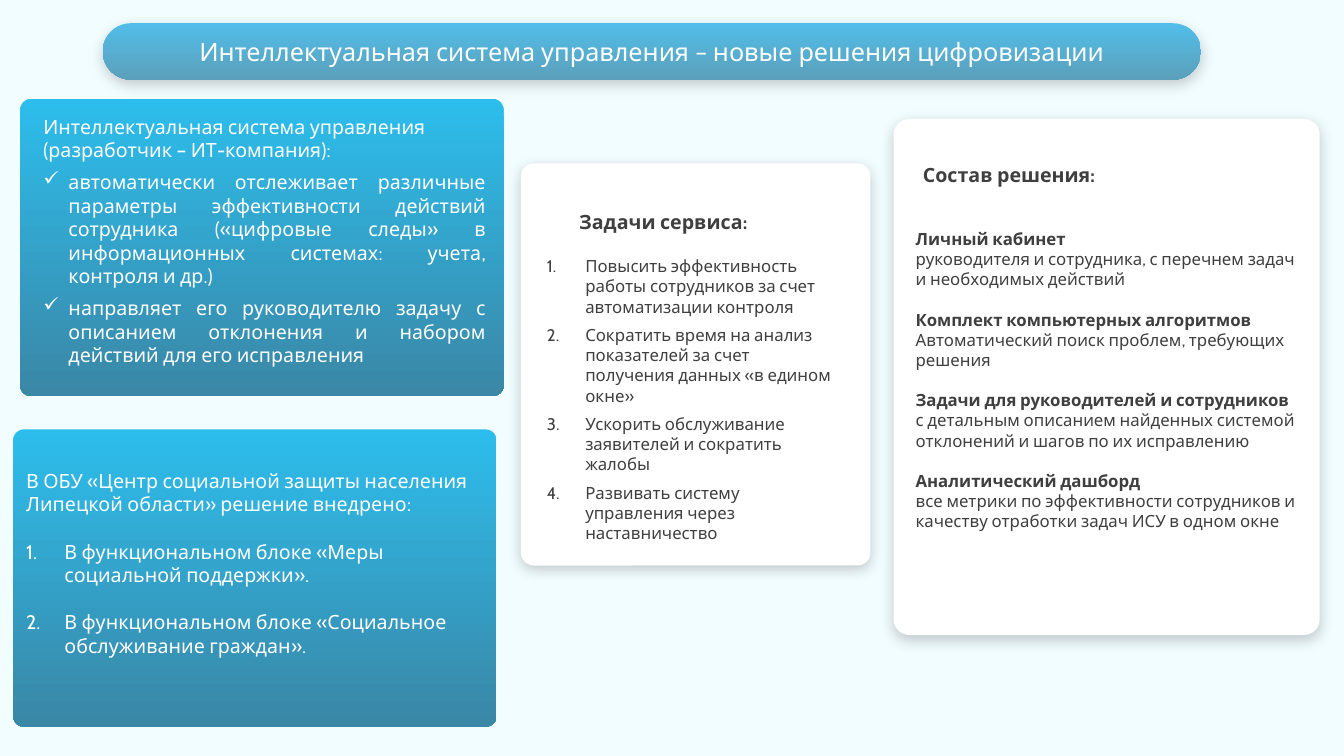
import dataclasses

import pptx
import pptx.dml.color
import pptx.enum.shapes
import pptx.enum.text
import pptx.oxml
import pptx.oxml.ns
import pptx.util

ALIGN = pptx.enum.text.PP_ALIGN
ANCHOR = pptx.enum.text.MSO_ANCHOR
WIDTH, HEIGHT = 13.34, 7.5


@dataclasses.dataclass(frozen=True)
class Theme:
    background: str = "F2FDFF"
    white: str = "FFFFFF"
    dark: str = "3F3F3F"
    banner: tuple = ("51BDE8", "5CA0BB")
    panel: tuple = ("2DBDEC", "3A87A6")
    title_font: str = "Karla"
    body_font: str = "Cabin"
    title: int = 18
    heading: int = 14
    body: int = 12
    corner: float = 0.037
    gap: int = 6
    heading_line: float = 16.8  # height of one heading line, points
    body_line: float = 14.4  # height of one body line, points


THEME = Theme()

INTRO = "Интеллектуальная система управления (разработчик – ИТ-компания):"
ABILITIES = (
    "автоматически отслеживает различные параметры эффективности действий сотрудника "
    "(«цифровые следы» в информационных системах: учета, контроля и др.)",
    "направляет его руководителю задачу с описанием отклонения и набором действий "
    "для его исправления",
)
ROLLOUT = "В ОБУ «Центр социальной защиты населения Липецкой области» решение внедрено:"
BLOCKS = (
    "В функциональном блоке «Меры социальной поддержки».",
    "В функциональном блоке «Социальное обслуживание граждан».",
)
TASKS = (
    "Повысить эффективность работы сотрудников за счет автоматизации контроля",
    "Сократить время на анализ показателей за счет получения данных «в едином окне»",
    "Ускорить обслуживание заявителей и сократить жалобы",
    "Развивать систему управления через наставничество",
)
PARTS = (
    ("Личный кабинет",
     "руководителя и сотрудника, с перечнем задач и необходимых действий"),
    ("Комплект компьютерных алгоритмов",
     "Автоматический поиск проблем, требующих решения"),
    ("Задачи для руководителей и сотрудников",
     "с детальным описанием найденных системой отклонений и шагов по их исправлению"),
    ("Аналитический дашборд",
     "все метрики по эффективности сотрудников и качеству отработки задач ИСУ в одном окне"),
)


def rgb(color):
    return pptx.dml.color.RGBColor.from_string(color)


def place(left, top, width, height):
    """Turn percentages of the slide into lengths."""
    shares = ((left, WIDTH), (top, HEIGHT), (width, WIDTH), (height, HEIGHT))
    return [pptx.util.Inches(share * side / 100) for share, side in shares]


def add_shadow(shape):
    shape.shadow.inherit = False
    effects = shape._element.spPr.find(pptx.oxml.ns.qn("a:effectLst"))
    effects.append(pptx.oxml.parse_xml(
        f'<a:outerShdw {pptx.oxml.ns.nsdecls("a")} blurRad="127000" dist="38100" '
        'dir="5400000" algn="t" rotWithShape="0"><a:srgbClr val="000000">'
        '<a:alpha val="20000"/></a:srgbClr></a:outerShdw>'))


def set_frame(box, left_inset=0.1, top_inset=0.05, anchor=ANCHOR.TOP):
    frame = box.text_frame
    frame.word_wrap = True
    frame.vertical_anchor = anchor
    frame.margin_left = pptx.util.Inches(left_inset)
    frame.margin_top = pptx.util.Inches(top_inset)


def add_panel(page, area, fill, corner=THEME.corner, shadow=False, **frame):
    """Rounded panel; a pair of colours as fill runs from top to bottom."""
    panel = page.shapes.add_shape(
        pptx.enum.shapes.MSO_SHAPE.ROUNDED_RECTANGLE, *place(*area))
    panel.adjustments[0] = corner
    panel.line.fill.background()
    panel.shadow.inherit = False
    if isinstance(fill, tuple):
        panel.fill.gradient()
        panel.fill.gradient_angle = 270
        for stop, color in zip(panel.fill.gradient_stops, fill):
            stop.color.rgb = rgb(color)
    else:
        panel.fill.solid()
        panel.fill.fore_color.rgb = rgb(fill)
    if shadow:
        add_shadow(panel)
    set_frame(panel, **frame)
    return panel


def add_text_box(page, area, **frame):
    box = page.shapes.add_textbox(*place(*area))
    set_frame(box, **frame)
    return box


def add_bullet(para, color, indent, mark=None, number=None):
    props = para._p.get_or_add_pPr()
    props.set("marL", str(pptx.util.Inches(indent)))
    props.set("indent", str(-pptx.util.Inches(indent)))
    names = pptx.oxml.ns.nsdecls("a")
    props.append(pptx.oxml.parse_xml(
        f'<a:buClr {names}><a:srgbClr val="{color}"/></a:buClr>'))
    if mark:
        bullet = f'<a:buChar {names} char="{mark}"/>'
    else:
        bullet = f'<a:buAutoNum {names} type="arabicPeriod" startAt="{number}"/>'
    props.append(pptx.oxml.parse_xml(bullet))


def write(box, text, size=THEME.body, color=THEME.dark, font=THEME.body_font,
          bold=False, align=ALIGN.LEFT, before=0, indent=0.38, mark=None, number=None):
    """Add one paragraph to the box."""
    frame = box.text_frame
    first = not frame.paragraphs[0].runs
    para = frame.paragraphs[0] if first else frame.add_paragraph()
    if mark or number:
        add_bullet(para, color, indent, mark, number)
    para.alignment = align
    para.space_before = pptx.util.Pt(0 if first else before)
    span = para.add_run()
    span.text = text
    span.font.size = pptx.util.Pt(size)
    span.font.name = font
    span.font.bold = bold
    span.font.color.rgb = rgb(color)


def write_numbered(box, items, **style):
    for number, item in enumerate(items, 1):
        write(box, item, number=number, **style)


def main():
    deck = pptx.Presentation()
    deck.slide_width = pptx.util.Inches(WIDTH)
    deck.slide_height = pptx.util.Inches(HEIGHT)
    page = deck.slides.add_slide(deck.slide_layouts[6])
    page.background.fill.solid()
    page.background.fill.fore_color.rgb = rgb(THEME.background)
    on_blue = {"size": THEME.heading, "color": THEME.white}

    # Title banner
    banner = add_panel(page, (7.65, 3.07, 81.71, 7.47), THEME.banner, corner=0.5,
                       shadow=True, anchor=ANCHOR.MIDDLE)
    write(banner, "Интеллектуальная система управления – новые решения цифровизации",
          size=THEME.title, color=THEME.white, font=THEME.title_font, align=ALIGN.CENTER)

    # What the system does
    add_panel(page, (1.5, 13.07, 35.98, 39.33), THEME.panel)
    intro = add_text_box(page, (3.22, 14.53, 33.66, 34.67), left_inset=0)
    write(intro, INTRO, **on_blue)
    for ability in ABILITIES:
        write(intro, ability, mark="✓", indent=0.25, align=ALIGN.JUSTIFY,
              before=THEME.gap, **on_blue)

    # Where it is in use
    rollout = add_panel(page, (0.97, 56.8, 35.98, 39.33), THEME.panel, top_inset=0.36)
    write(rollout, ROLLOUT, **on_blue)
    write_numbered(rollout, BLOCKS, before=THEME.heading_line, **on_blue)

    # Tasks of the service
    add_panel(page, (38.76, 21.6, 26.01, 53.2), THEME.white, shadow=True)
    heading = add_text_box(page, (42.35, 27.07, 18, 4.4))
    write(heading, "Задачи сервиса:", size=THEME.heading, bold=True)
    tasks = add_text_box(page, (39.96, 33.2, 23.01, 39))
    write_numbered(tasks, TASKS, before=THEME.gap)

    # Parts of the solution
    add_panel(page, (66.49, 15.73, 31.71, 68.27), THEME.white, shadow=True)
    heading = add_text_box(page, (67.92, 20.93, 18, 4.4))
    write(heading, "Состав решения:", size=THEME.heading, bold=True)
    parts = add_text_box(page, (67.39, 29.6, 30.73, 43.87))
    for name, detail in PARTS:
        write(parts, name, bold=True, before=THEME.body_line)
        write(parts, detail)

    deck.save("out.pptx")


if __name__ == "__main__":
    main()
